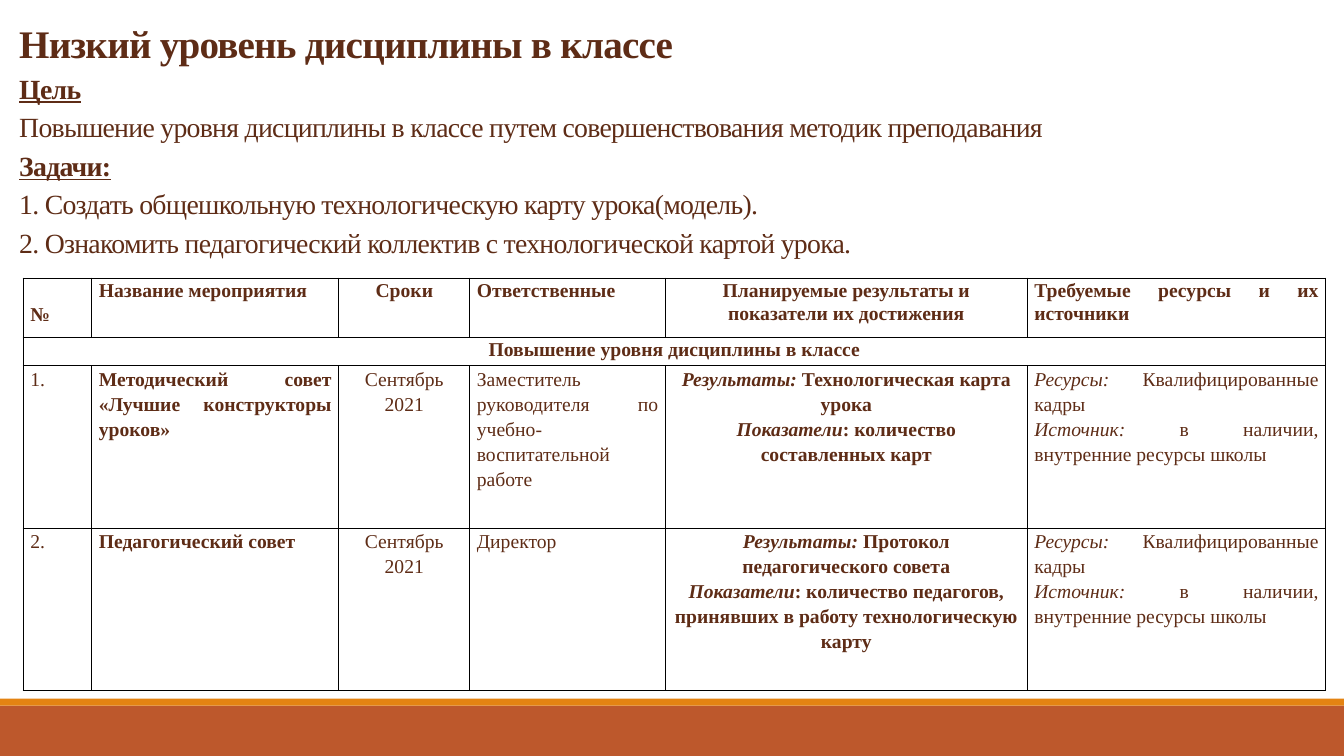
from dataclasses import dataclass
from itertools import product

from lxml import etree
from pptx import Presentation
from pptx import util as u
from pptx.dml.color import RGBColor
from pptx.enum import shapes, text
from pptx.oxml import ns


@dataclass(frozen=True)
class Theme:
    ink: str = "5E2C16"
    border: str = "000000"
    footer: str = "BD582C"
    stripe: str = "E48312"
    font: str = "Times New Roman"
    heading_size: float = 27.9
    goal_size: float = 19.8
    cell_size: float = 14
    border_width: float = 1


@dataclass(frozen=True)
class Span:
    wording: str
    bold: bool = False
    italic: bool = False
    underline: bool = False


@dataclass(frozen=True)
class Bar:
    top: float
    height: float
    color: str


@dataclass(frozen=True)
class Entry:
    """A table cell: each line is a list of spans."""
    lines: list[list[Span]]
    centered: bool = False
    top_margin: float = 0


THEME = Theme()
SLIDE_WIDTH, SLIDE_HEIGHT = u.Inches(13.33), u.Inches(7.5)


def across(percent: float) -> int:
    return round(SLIDE_WIDTH * percent / 100)


def down(percent: float) -> int:
    return round(SLIDE_HEIGHT * percent / 100)


def apply(target, values: dict) -> None:
    for name, value in values.items():
        setattr(target, name, value)


def write_line(paragraph, spans: list[Span], size: float, spacing: float,
               alignment, tracking: int = 0) -> None:
    apply(paragraph, {"alignment": alignment, "line_spacing": spacing,
                      "space_before": u.Pt(0), "space_after": u.Pt(0)})
    for span in spans:
        run = paragraph.add_run()
        run.text = span.wording
        apply(run.font, {"name": THEME.font, "size": u.Pt(size), "bold": span.bold,
                         "italic": span.italic, "underline": span.underline})
        run.font.color.rgb = RGBColor.from_string(THEME.ink)
        if tracking:
            run.font._element.set("spc", str(tracking))


def next_paragraph(frame, index: int):
    return frame.add_paragraph() if index else frame.paragraphs[0]


def draw_bar(slide, bar: Bar) -> None:
    band = slide.shapes.add_shape(shapes.MSO_SHAPE.RECTANGLE, 0, down(bar.top),
                                  SLIDE_WIDTH, down(bar.height))
    band.shadow.inherit = False
    band.fill.solid()
    band.fill.fore_color.rgb = RGBColor.from_string(bar.color)
    band.line.fill.background()


def draw_goals(slide, lines: list[tuple[Span, float]]) -> None:
    goals = slide.shapes.title
    apply(goals, {"left": across(0.68), "top": down(1.07),
                  "width": across(97.9), "height": down(38.4)})
    frame = goals.text_frame
    apply(frame, {"word_wrap": True, "auto_size": text.MSO_AUTO_SIZE.NONE,
                  "vertical_anchor": text.MSO_ANCHOR.BOTTOM,
                  "margin_left": u.Inches(0.1), "margin_right": u.Inches(0.1),
                  "margin_top": u.Inches(0.05), "margin_bottom": u.Inches(0.39)})
    for index, (span, size) in enumerate(lines):
        write_line(next_paragraph(frame, index), [span], size, 1.16,
                   text.PP_ALIGN.LEFT, tracking=-50)


def outline_cell(cell) -> None:
    properties = cell._tc.get_or_add_tcPr()
    for position, side in enumerate(("lnL", "lnR", "lnT", "lnB")):
        edge = etree.Element(ns.qn(f"a:{side}"), w=str(u.Pt(THEME.border_width)))
        fill = etree.SubElement(edge, ns.qn("a:solidFill"))
        etree.SubElement(fill, ns.qn("a:srgbClr"), val=THEME.border)
        properties.insert(position, edge)


def fill_cell(cell, entry: Entry, spacing: float) -> None:
    apply(cell, {"margin_left": u.Inches(0.07), "margin_right": u.Inches(0.07),
                 "margin_top": u.Inches(entry.top_margin), "margin_bottom": 0,
                 "vertical_anchor": text.MSO_ANCHOR.TOP})
    alignment = text.PP_ALIGN.CENTER if entry.centered else text.PP_ALIGN.JUSTIFY
    for index, spans in enumerate(entry.lines):
        write_line(next_paragraph(cell.text_frame, index), spans,
                   THEME.cell_size, spacing, alignment)


def draw_plan(slide, rows: list[list[Entry]]) -> None:
    widths = [across(share) for share in (5.1, 18.38, 9.75, 14.55, 26.93, 22.2)]
    heights = [down(share) for share in (7.87, 3.73, 21.47, 21.47)]
    plan = slide.shapes.add_table(len(heights), len(widths), across(1.73), down(36.8),
                                  sum(widths), sum(heights)).table
    apply(plan, {"first_row": False, "horz_banding": False})
    for column, width in zip(plan.columns, widths):
        column.width = width
    for row, height in zip(plan.rows, heights):
        row.height = height
    for r, c in product(range(len(heights)), range(len(widths))):
        plan.cell(r, c).fill.background()
        outline_cell(plan.cell(r, c))
    plan.cell(1, 0).merge(plan.cell(1, len(widths) - 1))
    for r, entries in enumerate(rows):
        for c, entry in enumerate(entries):
            fill_cell(plan.cell(r, c), entry, 1.07 if r < 2 else 1.15)


def header(wording: str, centered: bool = False, top_margin: float = 0) -> Entry:
    return Entry([[Span(wording, bold=True)]], centered, top_margin)


def activity(number: str, event: str, responsible: str, result: str,
             indicator: str) -> list[Entry]:
    return [
        Entry([[Span(number)]]),
        header(event),
        Entry([[Span("Сентябрь")], [Span("2021")]], centered=True),
        Entry([[Span(responsible)]]),
        Entry([[Span("Результаты:", bold=True, italic=True), Span(f" {result}", bold=True)],
               [Span("Показатели", bold=True, italic=True),
                Span(f": {indicator}", bold=True)]], centered=True),
        Entry([[Span("Ресурсы:", italic=True), Span(" Квалифицированные кадры")],
               [Span("Источник:", italic=True),
                Span(" в наличии, внутренние ресурсы школы")]]),
    ]


# Content
BARS = [Bar(93.33, 6.67, THEME.footer), Bar(92.4, 0.93, THEME.stripe)]
GOALS = [
    (Span("Низкий уровень дисциплины в классе", bold=True), THEME.heading_size),
    (Span("Цель", bold=True, underline=True), THEME.goal_size),
    (Span("Повышение уровня дисциплины в классе путем совершенствования "
          "методик преподавания"), THEME.goal_size),
    (Span("Задачи:", bold=True, underline=True), THEME.goal_size),
    (Span("1. Создать общешкольную технологическую карту урока(модель)."),
     THEME.goal_size),
    (Span("2. Ознакомить педагогический коллектив с технологической картой урока."),
     THEME.goal_size),
]
PLAN = [
    [header("№", top_margin=0.24), header("Название мероприятия"),
     header("Сроки", centered=True), header("Ответственные"),
     header("Планируемые результаты и показатели их достижения", centered=True),
     header("Требуемые ресурсы и их источники")],
    [header("Повышение уровня дисциплины в классе", centered=True)],
    activity("1.", "Методический совет «Лучшие конструкторы уроков»",
             "Заместитель руководителя по учебно-воспитательной работе",
             "Технологическая карта урока", "количество составленных карт"),
    activity("2.", "Педагогический совет", "Директор",
             "Протокол педагогического совета",
             "количество педагогов, принявших в работу технологическую карту"),
]


def main() -> None:
    deck = Presentation()
    apply(deck, {"slide_width": SLIDE_WIDTH, "slide_height": SLIDE_HEIGHT})
    slide = deck.slides.add_slide(deck.slide_layouts.get_by_name("Title Only"))
    # Footer bars
    for bar in BARS:
        draw_bar(slide, bar)
    # Goal and tasks
    draw_goals(slide, GOALS)
    # Activity plan
    draw_plan(slide, PLAN)
    deck.save("out.pptx")


if __name__ == "__main__":
    main()
